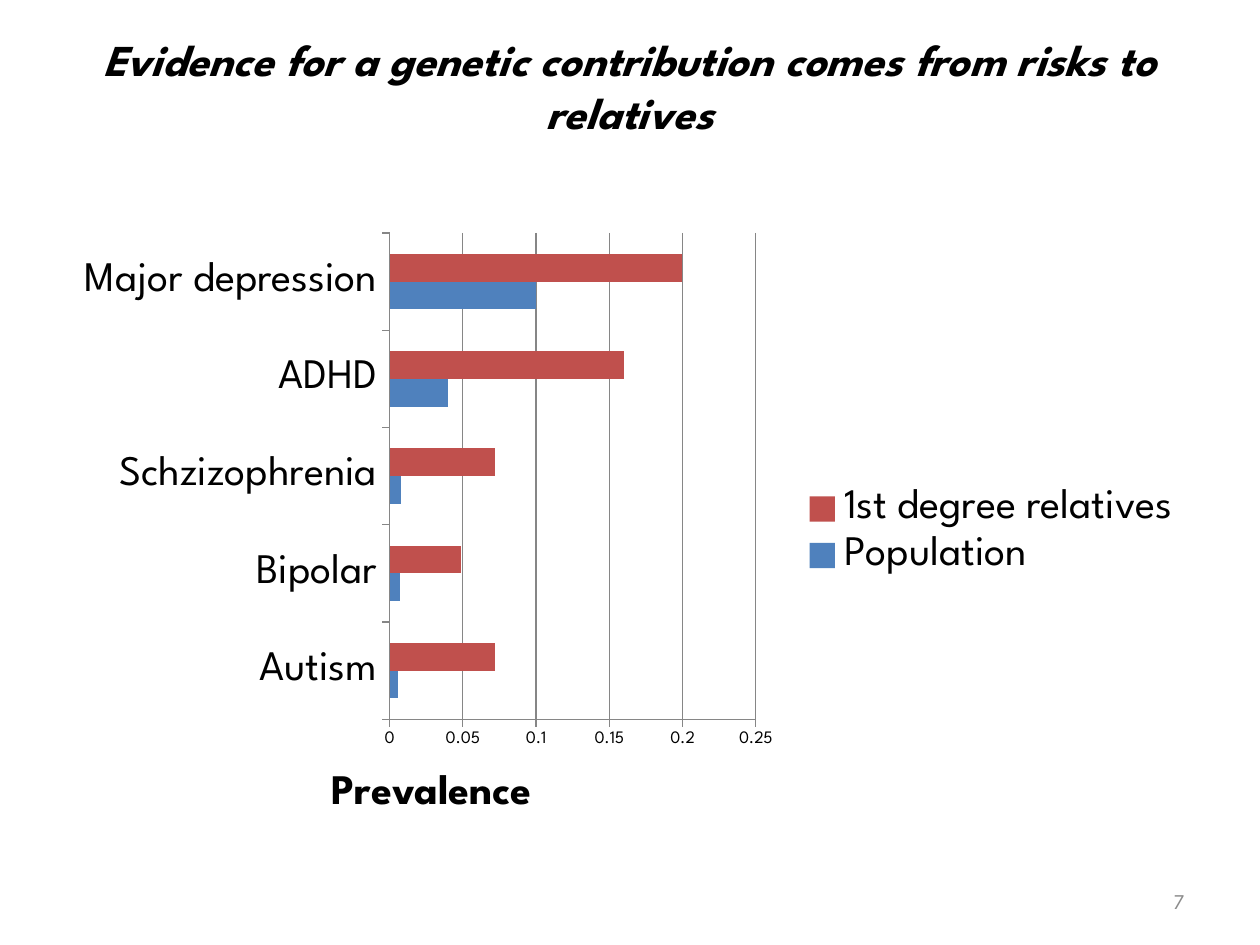
from lxml import etree
from pptx import Presentation
from pptx.chart.data import CategoryChartData
from pptx.dml.color import RGBColor
from pptx.enum.chart import XL_CHART_TYPE, XL_LEGEND_POSITION, XL_TICK_MARK
from pptx.enum.text import MSO_ANCHOR, PP_ALIGN
from pptx.oxml.ns import qn
from pptx.util import Inches, Pt

BAR = XL_CHART_TYPE.BAR_CLUSTERED
LEGEND_RIGHT = XL_LEGEND_POSITION.RIGHT
TICK_OUT, TICK_NONE = XL_TICK_MARK.OUTSIDE, XL_TICK_MARK.NONE
MIDDLE = MSO_ANCHOR.MIDDLE
CENTER, RIGHT = PP_ALIGN.CENTER, PP_ALIGN.RIGHT

FONT = "League Spartan"
BLACK, GREY, LINE = "000000", "8C8C8C", "868686"
CATEGORIES = ["Autism", "Bipolar", "Schzizophrenia", "ADHD", "Major depression"]
SERIES = [
    ("Population", "4F81BD", [0.006, 0.007, 0.008, 0.04, 0.1]),
    ("1st degree relatives", "C0504D", [0.072, 0.049, 0.072, 0.16, 0.2]),
]


def rgb(value):
    return RGBColor.from_string(value)


def style_font(font, color=BLACK, **values):
    font.color.rgb = rgb(color)
    for name, value in {"name": FONT, **values}.items():
        setattr(font, name, value)


def add_text(slide, box, text, align, color=BLACK, **values):
    tf = slide.shapes.add_textbox(*map(Inches, box)).text_frame
    tf.word_wrap = True
    tf.vertical_anchor = MIDDLE
    p = tf.paragraphs[0]
    p.alignment = align
    r = p.add_run()
    r.text = text
    style_font(r.font, color, **values)


def set_layout(parent, index, **values):
    """Place a chart part by fractions of the chart area."""
    for old in parent.findall(qn("c:layout")):
        parent.remove(old)
    layout = etree.Element(qn("c:layout"))
    manual = etree.SubElement(layout, qn("c:manualLayout"))
    for name, value in values.items():
        etree.SubElement(manual, qn(f"c:{name}")).set("val", str(value))
    parent.insert(index, layout)


def style_axis(axis, size):
    axis.major_tick_mark = TICK_OUT
    axis.minor_tick_mark = TICK_NONE
    axis.format.line.color.rgb = rgb(LINE)
    style_font(axis.tick_labels.font, size=Pt(size))


def add_prevalence_chart(slide, box):
    data = CategoryChartData()
    data.categories = CATEGORIES
    for name, _, values in SERIES:
        data.add_series(name, values)
    chart = slide.shapes.add_chart(BAR, *map(Inches, box), data).chart
    chart.has_title = False
    style_font(chart.font, size=Pt(10))

    # Bars
    plot = chart.plots[0]
    plot.gap_width = 150
    plot.overlap = 0
    plot.vary_by_categories = False
    for series, (_, color, _) in zip(plot.series, SERIES):
        series.format.fill.solid()
        series.format.fill.fore_color.rgb = rgb(color)

    # Axes
    cat_axis, val_axis = chart.category_axis, chart.value_axis
    style_axis(cat_axis, 24)
    style_axis(val_axis, 10)
    cat_axis.has_major_gridlines = False
    val_axis.minimum_scale, val_axis.maximum_scale = 0, 0.25
    val_axis.major_unit = 0.05
    val_axis.has_major_gridlines = True
    val_axis.major_gridlines.format.line.color.rgb = rgb(LINE)
    title = val_axis.axis_title
    r = title.text_frame.paragraphs[0].add_run()
    r.text = "Prevalence"
    style_font(r.font, size=Pt(24), bold=True)

    # Legend
    chart.has_legend = True
    chart.legend.position = LEGEND_RIGHT
    chart.legend.include_in_layout = False
    style_font(chart.legend.font, size=Pt(24))

    # Positions
    plot_area = chart.element.find(".//" + qn("c:plotArea"))
    set_layout(plot_area, 0, layoutTarget="inner", xMode="edge", yMode="edge",
               x=0.288, y=0.02, w=0.323, h=0.78)
    set_layout(plot_area.find(".//" + qn("c:title")), 1,
               xMode="edge", yMode="edge", x=0.23, y=0.87)


def main():
    prs = Presentation()
    prs.slide_width, prs.slide_height = Inches(10), Inches(7.5)
    slide = prs.slides.add_slide(prs.slide_layouts[6])

    # Heading
    add_text(slide, (0.5, 0.3, 9, 0.75),
             "Evidence for a genetic contribution comes from risks to relatives",
             CENTER, size=Pt(25.2), bold=True, italic=True)
    add_prevalence_chart(slide, (0.5, 1.75, 9, 4.95))
    # Slide number
    add_text(slide, (7.17, 6.95, 2.33, 0.4), "7", RIGHT, GREY, size=Pt(12))

    prs.save("out.pptx")


if __name__ == "__main__":
    main()
